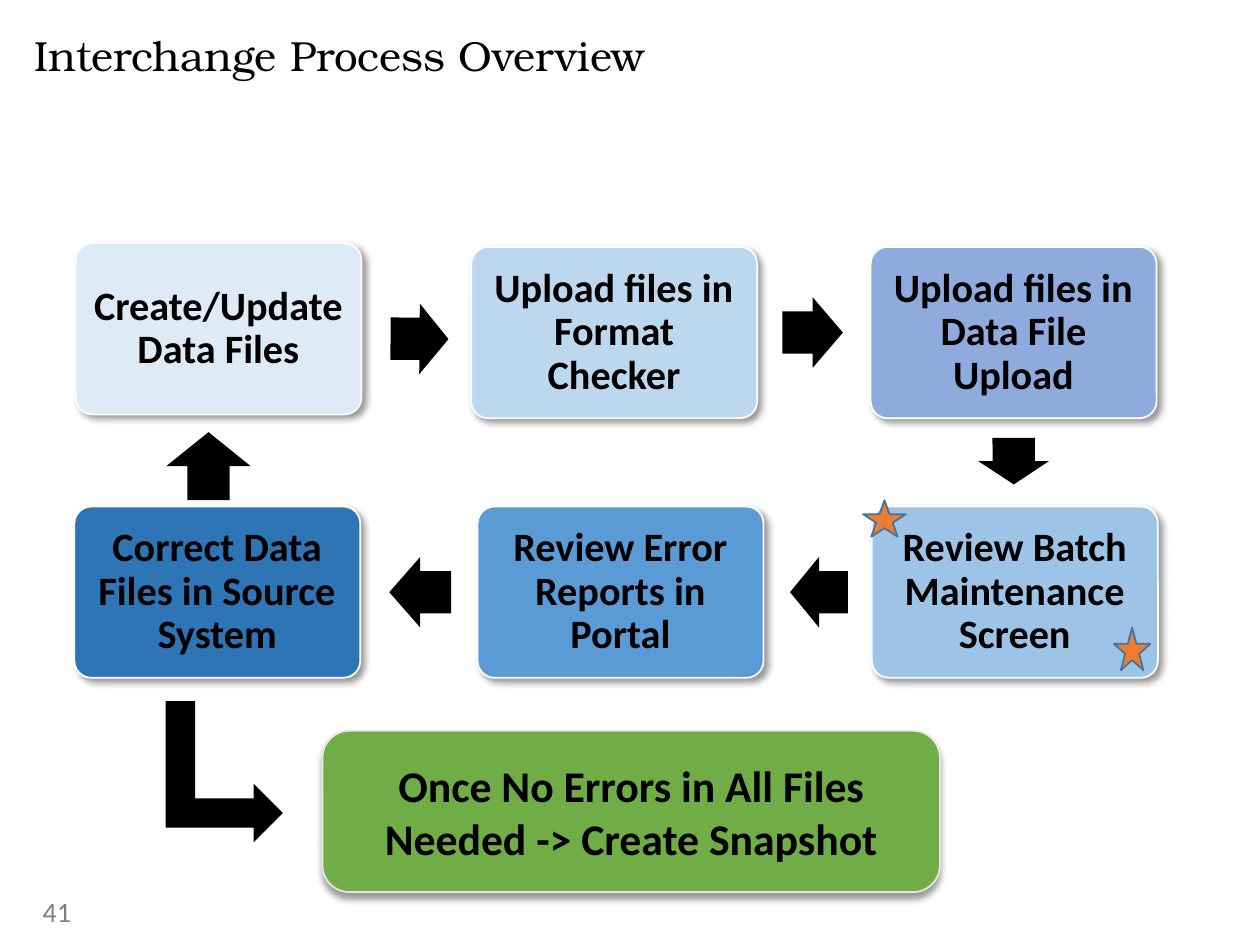
import pptx
import pptx.dml.color
import pptx.enum.shapes
import pptx.enum.text
import pptx.oxml
import pptx.util
from pptx.util import Inches

SHAPE = pptx.enum.shapes.MSO_SHAPE
ALIGN = pptx.enum.text.PP_ALIGN
ANCHOR = pptx.enum.text.MSO_ANCHOR
DRAWING_NS = "http://schemas.openxmlformats.org/drawingml/2006/main"

CARD_WIDTH, CARD_HEIGHT = 2.27, 1.36

# Left, top, fill, text
CARDS = [
    (0.6, 1.93, "DEEBF7", "Create/Update Data Files"),
    (3.74, 1.96, "BDD7EE", "Upload files in Format Checker"),
    (6.91, 1.96, "8FAADC", "Upload files in Data File Upload"),
    (6.92, 4.02, "9DC3E6", "Review Batch Maintenance Screen"),
    (3.79, 4.02, "5B9BD5", "Review Error Reports in Portal"),
    (0.59, 4.02, "2E75B6", "Correct Data Files in Source System"),
]

# Left, top, width, rotation
STEP_ARROWS = [
    (3.1, 2.41, 0.46, 0.5),
    (6.21, 2.36, 0.48, 0),
    (7.86, 3.38, 0.37, 89.8),
    (6.27, 4.42, 0.46, 180),
    (3.09, 4.42, 0.49, 180),
]
ARROW_HEIGHT = 0.56

# Left, top, width, height
STARS = [(6.85, 3.97, 0.34, 0.29), (8.84, 4.98, 0.29, 0.34)]


def color(value):
    return pptx.dml.color.RGBColor.from_string(value)


def write(box, text, size, font="Calibri", fill="000000", bold=False,
          align=ALIGN.LEFT, anchor=ANCHOR.TOP, spacing=None, insets=None):
    frame = box.text_frame
    frame.word_wrap = True
    frame.vertical_anchor = anchor
    if insets is not None:
        frame.margin_left = frame.margin_right = Inches(insets)
        frame.margin_top = frame.margin_bottom = Inches(insets)
    para = frame.paragraphs[0]
    para.alignment = align
    para.line_spacing = spacing
    span = para.add_run()
    span.text = text
    span.font.name = font
    span.font.size = pptx.util.Pt(size)
    span.font.bold = bold
    span.font.color.rgb = color(fill)


def add_text(page, left, top, width, height, text, size, **style):
    box = page.shapes.add_textbox(Inches(left), Inches(top), Inches(width), Inches(height))
    write(box, text, size, **style)


def add_shape(page, kind, left, top, width, height, fill="000000", line=None,
              rotation=0, adjust=()):
    shape = page.shapes.add_shape(
        kind, Inches(left), Inches(top), Inches(width), Inches(height))
    shape.shadow.inherit = False
    shape.rotation = rotation
    for index, value in enumerate(adjust):
        shape.adjustments[index] = value
    shape.fill.solid()
    shape.fill.fore_color.rgb = color(fill)
    if line:
        shape.line.color.rgb = color(line)
        shape.line.width = pptx.util.Pt(1)
    else:
        shape.line.fill.background()
    return shape


def add_shadow(shape, angle):
    effects = shape._element.spPr.find(f"{{{DRAWING_NS}}}effectLst")
    effects.append(pptx.oxml.parse_xml(
        f'<a:outerShdw xmlns:a="{DRAWING_NS}" blurRad="{pptx.util.Pt(4)}" '
        f'dist="{pptx.util.Pt(3)}" dir="{angle * 60000}" algn="ctr" rotWithShape="0">'
        '<a:srgbClr val="000000"><a:alpha val="40000"/></a:srgbClr></a:outerShdw>'))


def add_card(page, left, top, fill, text):
    card = add_shape(page, SHAPE.ROUNDED_RECTANGLE, left, top, CARD_WIDTH, CARD_HEIGHT,
                     fill=fill, line="FFFFFF", adjust=[0.1])
    add_shadow(card, 45)
    write(card, text, 23, bold=True, align=ALIGN.CENTER, anchor=ANCHOR.MIDDLE,
          spacing=0.9, insets=0.1)


def add_result(page):
    result = add_shape(page, SHAPE.ROUNDED_RECTANGLE, 2.56, 5.8, 4.9, 1.28,
                       fill="70AD47", line="E7E6E6")
    add_shadow(result, 90)
    write(result, "Once No Errors in All Files Needed -> Create Snapshot", 25,
          bold=True, align=ALIGN.CENTER, anchor=ANCHOR.MIDDLE)


def main():
    deck = pptx.Presentation()
    deck.slide_width, deck.slide_height = Inches(10), Inches(7.5)
    page = deck.slides.add_slide(deck.slide_layouts[6])

    # Title and page number
    add_text(page, 0.27, 0.28, 6.65, 0.83, "Interchange Process Overview", 24,
             font="TeX Gyre Bonum", spacing=0.9, insets=0)
    add_text(page, 0.24, 7.03, 2.25, 0.4, "41", 16, fill="808080", anchor=ANCHOR.MIDDLE)

    # Process cycle
    for card in CARDS:
        add_card(page, *card)
    for left, top, width, rotation in STEP_ARROWS:
        add_shape(page, SHAPE.RIGHT_ARROW, left, top, width, ARROW_HEIGHT,
                  rotation=rotation, adjust=[0.6, 0.5])
    add_shape(page, SHAPE.UP_ARROW, 1.32, 3.43, 0.67, 0.54)

    # Final step
    add_result(page)
    add_shape(page, SHAPE.BENT_UP_ARROW, 1.22, 5.66, 1.12, 0.93, rotation=90)

    # Stars on the review card
    for star in STARS:
        add_shape(page, SHAPE.STAR_5_POINT, *star, fill="ED7D31", line="43739E")

    deck.save("out.pptx")


if __name__ == "__main__":
    main()
